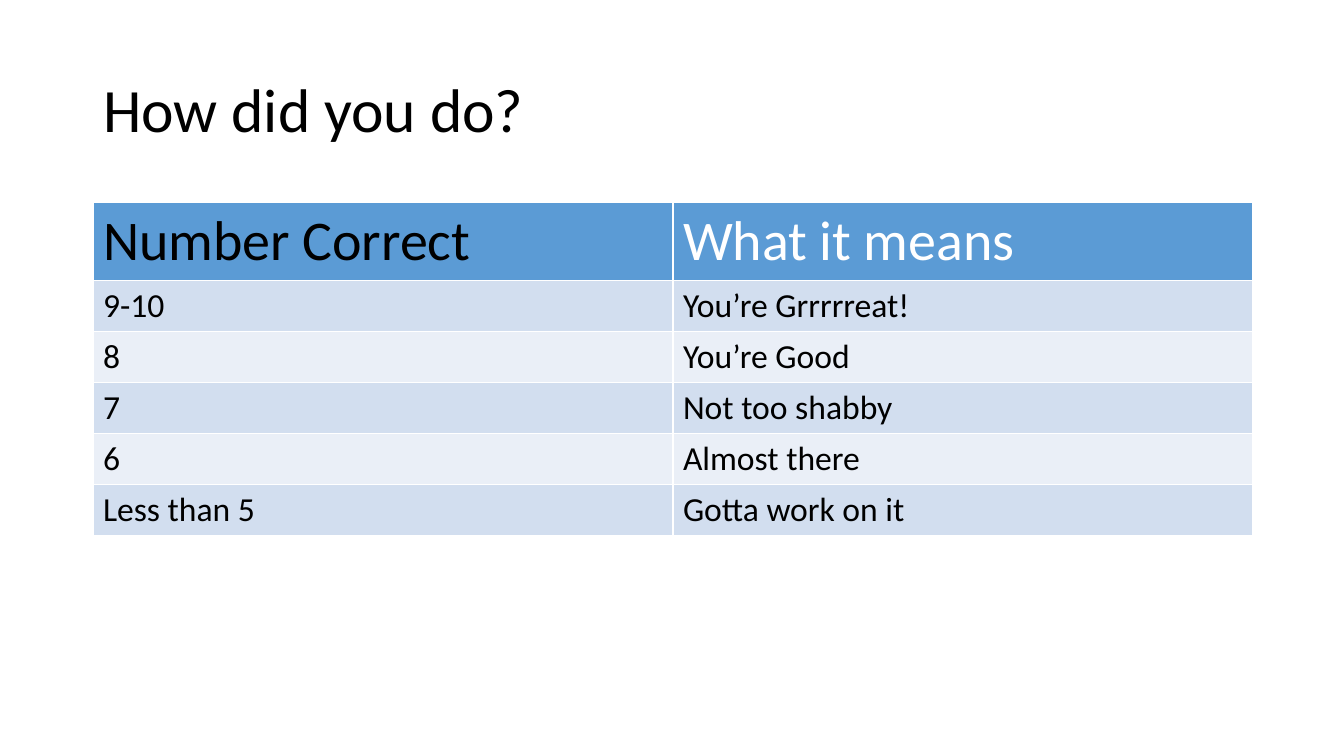
from lxml.etree import SubElement
from pptx import Presentation
from pptx.dml.color import RGBColor
from pptx.enum.text import MSO_ANCHOR as Anchor, MSO_AUTO_SIZE as AutoSize, PP_ALIGN as Align
from pptx.oxml.ns import qn
from pptx.util import Emu, Pt

PX = 914400 / 100.8
COLORS = {"text": "000000", "white": "FFFFFF", "header": "5B9BD5",
          "odd": "D2DEEF", "even": "EAEFF7"}
SCORES = [
    ("Number Correct", "What it means"),
    ("9-10", "You’re Grrrrreat!"),
    ("8", "You’re Good"),
    ("7", "Not too shabby"),
    ("6", "Almost there"),
    ("Less than 5", "Gotta work on it"),
]


def px(length):
    return Emu(round(length * PX))


def apply(target, values):
    for name, value in values.items():
        setattr(target, name, value)


class SlideBuilder:
    font_name = "Calibri"

    def __init__(self, presentation):
        self.slide = presentation.slides.add_slide(presentation.slide_layouts[5])

    def add_text(self, frame, text, size, color):
        paragraph = frame.paragraphs[0]
        paragraph.alignment = Align.LEFT
        run = paragraph.add_run()
        run.text = text
        apply(run.font, {"name": self.font_name, "size": Pt(size), "bold": False})
        run.font.color.rgb = RGBColor.from_string(COLORS[color])
        return paragraph

    def title(self, text, left, top, width, height):
        shape = self.slide.shapes.title
        apply(shape, {"left": px(left), "top": px(top),
                      "width": px(width), "height": px(height)})
        apply(shape.text_frame, {"vertical_anchor": Anchor.MIDDLE, "word_wrap": True,
                                 "auto_size": AutoSize.NONE})
        paragraph = self.add_text(shape.text_frame, text, 44, "text")
        paragraph.line_spacing = 0.9

    def border(self, cell):
        properties = cell._tc.get_or_add_tcPr()
        for side in ("a:lnL", "a:lnR", "a:lnT", "a:lnB"):
            line = SubElement(properties, qn(side), w=str(Pt(1)))
            fill = SubElement(line, qn("a:solidFill"))
            SubElement(fill, qn("a:srgbClr"), val=COLORS["white"])

    def cell(self, cell, text, size, color, fill):
        self.border(cell)
        cell.fill.solid()
        cell.fill.fore_color.rgb = RGBColor.from_string(COLORS[fill])
        self.add_text(cell.text_frame, text, size, color)

    def table(self, rows, left, top, column_width, header_height, row_height):
        column_count = len(rows[0])
        height = header_height + row_height * (len(rows) - 1)
        table = self.slide.shapes.add_table(
            len(rows), column_count, px(left), px(top),
            px(column_width * column_count), px(height)).table
        for column in table.columns:
            column.width = px(column_width)
        for row_index, texts in enumerate(rows):
            is_header = row_index == 0
            table.rows[row_index].height = px(header_height if is_header else row_height)
            fill = "header" if is_header else ("even", "odd")[row_index % 2]
            for column_index, text in enumerate(texts):
                color = "white" if is_header and column_index else "text"
                self.cell(table.cell(row_index, column_index), text,
                          40 if is_header else 24, color, fill)


def main():
    presentation = Presentation()
    apply(presentation, {"slide_width": px(1344), "slide_height": px(756)})
    builder = SlideBuilder(presentation)
    builder.title("How did you do?", 93, 40, 1159, 146)
    builder.table(SCORES, left=93, top=202, column_width=580,
                  header_height=77, row_height=51)
    presentation.save("out.pptx")


if __name__ == "__main__":
    main()
